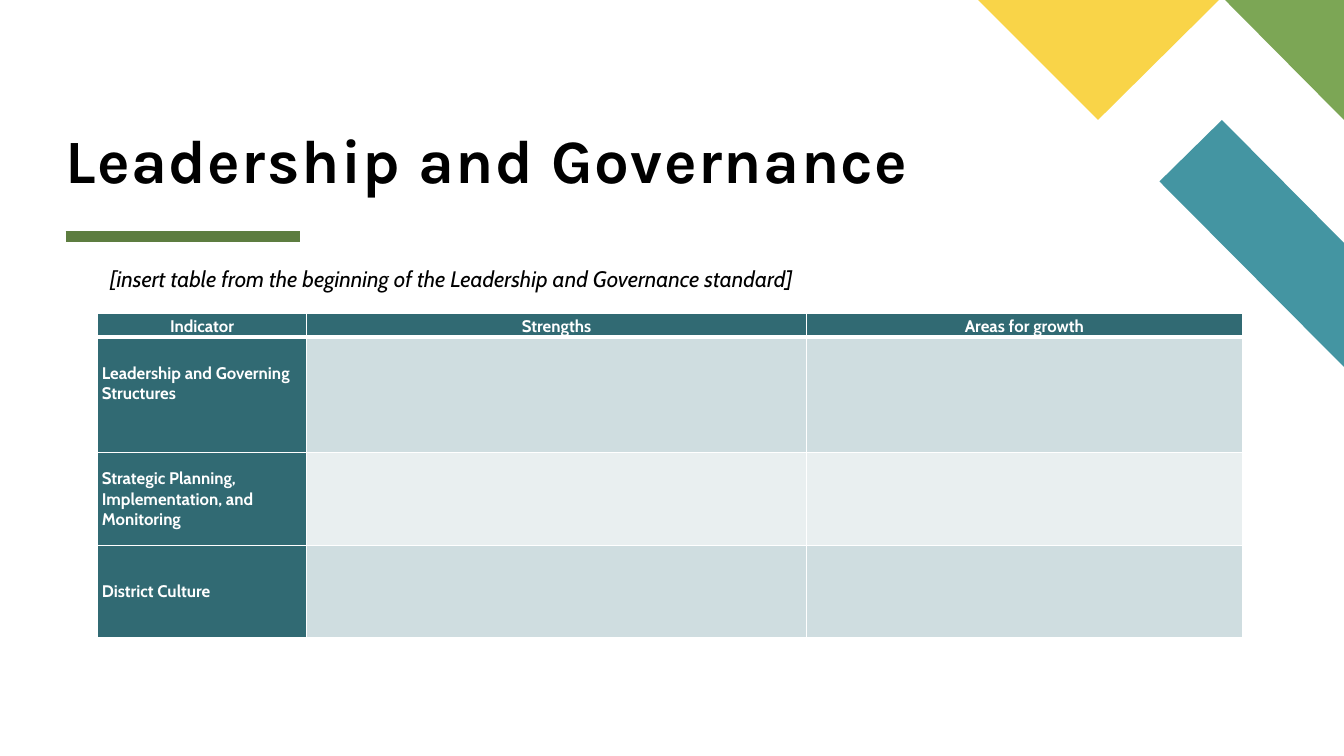
import pptx
import pptx.dml.color
import pptx.enum.shapes
import pptx.enum.text
import pptx.oxml
import pptx.oxml.ns
import pptx.util
from pptx.util import Inches

COLORS = {
    "black": "000000", "white": "FFFFFF", "yellow": "F9D448", "leaf": "7CA655",
    "moss": "5D7D40", "teal": "4495A2", "dark teal": "316A73",
    "band": "CFDDE0", "light band": "E9EFF0",
}
ALIGN = pptx.enum.text.PP_ALIGN
ANCHOR = pptx.enum.text.MSO_ANCHOR

CORNER_SHAPES = [
    ("teal", [(13.33, 3.64), (13.33, 2.41), (12.12, 1.19), (11.5, 1.8)]),
    ("leaf", [(13.33, 1.19), (13.33, 0), (12.15, 0)]),
    ("yellow", [(9.7, 0), (10.89, 1.19), (12.09, 0)]),
]
HEADERS = ["Indicator", "Strengths", "Areas for growth"]
INDICATORS = [
    "Leadership and Governing Structures",
    "Strategic Planning, Implementation, and Monitoring",
    "District Culture",
]
COLUMN_WIDTHS = [2.07, 4.96, 4.32]
ROW_HEIGHTS = [0.23, 1.15, 0.92, 0.92]


def rgb(name):
    return pptx.dml.color.RGBColor.from_string(COLORS[name])


def write_text(frame, text, *, font, size, color, bold=False, italic=False,
               align=ALIGN.LEFT, line_spacing=None, before=0, after=0,
               tracking=None, indent=0):
    """Fill the frame's first paragraph; tracking is in hundredths of a point."""
    paragraph = frame.paragraphs[0]
    paragraph.alignment = align
    paragraph.line_spacing = line_spacing
    paragraph.space_before = pptx.util.Pt(before)
    paragraph.space_after = pptx.util.Pt(after)
    if indent:
        paragraph._p.get_or_add_pPr().set("marL", str(Inches(indent)))
    run = paragraph.add_run()
    run.text = text
    run.font.name = font
    run.font.size = pptx.util.Pt(size)
    run.font.bold = bold
    run.font.italic = italic
    run.font.color.rgb = rgb(color)
    if tracking:
        run.font._element.set("spc", str(tracking))


def add_text_box(slide, left, top, width, height, text, anchor, margins, **text_format):
    frame = slide.shapes.add_textbox(
        Inches(left), Inches(top), Inches(width), Inches(height)).text_frame
    frame.word_wrap = True
    frame.vertical_anchor = anchor
    set_margins(frame, margins)
    write_text(frame, text, **text_format)


def set_margins(target, margins):
    """Set left, top, right and bottom margins of a text frame or a cell."""
    (target.margin_left, target.margin_top,
     target.margin_right, target.margin_bottom) = map(Inches, margins)


def add_polygon(slide, points, color):
    corners = [(Inches(x), Inches(y)) for x, y in points]
    builder = slide.shapes.build_freeform(*corners[0])
    builder.add_line_segments(corners[1:], close=True)
    shape = builder.convert_to_shape()
    shape.shadow.inherit = False
    shape.fill.solid()
    shape.fill.fore_color.rgb = rgb(color)
    shape.line.fill.background()


def add_rule(slide, left, right, y, color, weight):
    rule = slide.shapes.add_connector(
        pptx.enum.shapes.MSO_CONNECTOR.STRAIGHT,
        Inches(left), Inches(y), Inches(right), Inches(y))
    rule.line.color.rgb = rgb(color)
    rule.line.width = pptx.util.Pt(weight)
    rule._element.spPr.append(pptx.oxml.parse_xml(
        f"<a:effectLst {pptx.oxml.ns.nsdecls('a')}/>"))


def style_cell(cell, color, top_border=1, bottom_border=1):
    properties = cell._tc.get_or_add_tcPr()
    weights = {"lnL": 1, "lnR": 1, "lnT": top_border, "lnB": bottom_border}
    for tag, weight in weights.items():
        properties.append(pptx.oxml.parse_xml(
            f'<a:{tag} {pptx.oxml.ns.nsdecls("a")} w="{pptx.util.Pt(weight)}">'
            f'<a:solidFill><a:srgbClr val="{COLORS["white"]}"/></a:solidFill></a:{tag}>'))
    cell.fill.solid()
    cell.fill.fore_color.rgb = rgb(color)


def add_indicator_table(slide, left, top):
    table = slide.shapes.add_table(
        len(ROW_HEIGHTS), len(COLUMN_WIDTHS), Inches(left), Inches(top),
        Inches(sum(COLUMN_WIDTHS)), Inches(sum(ROW_HEIGHTS))).table
    for column, width in zip(table.columns, COLUMN_WIDTHS):
        column.width = Inches(width)
    for row, height in zip(table.rows, ROW_HEIGHTS):
        row.height = Inches(height)

    label_format = dict(font="Cabin", size=12, color="white", bold=True, before=2, after=2)
    for index, header in enumerate(HEADERS):
        cell = table.cell(0, index)
        style_cell(cell, "dark teal", bottom_border=3)
        set_margins(cell, (0.04, 0, 0.04, 0))
        write_text(cell.text_frame, header, align=ALIGN.CENTER,
                   line_spacing=1.15, **label_format)

    for row, indicator in enumerate(INDICATORS, start=1):
        top_border = 3 if row == 1 else 1
        label = table.cell(row, 0)
        style_cell(label, "dark teal", top_border)
        label.vertical_anchor = ANCHOR.MIDDLE
        # The first label sits a little above the middle of its taller row.
        set_margins(label, (0.04, 0, 0.04, 0.22 if row == 1 else 0))
        write_text(label.text_frame, indicator, **label_format)
        for column in range(1, len(HEADERS)):
            style_cell(table.cell(row, column),
                       "band" if row % 2 else "light band", top_border)


def main():
    presentation = pptx.Presentation()
    presentation.slide_width = Inches(13.33)
    presentation.slide_height = Inches(7.5)
    slide = presentation.slides.add_slide(presentation.slide_layouts[6])

    for color, points in CORNER_SHAPES:
        add_polygon(slide, points, color)
    add_rule(slide, 0.65, 2.98, 2.35, "moss", 8)
    add_text_box(slide, 0.65, 0.22, 12, 1.72, "Leadership and Governance",
                 ANCHOR.BOTTOM, (0, 0, 0, 0), font="Karla", size=44,
                 color="black", bold=True, line_spacing=0.8, tracking=100)
    add_text_box(slide, 0.65, 2.58, 12, 0.5,
                 "[insert table from the beginning of the Leadership and Governance standard]",
                 ANCHOR.TOP, (0, 0.05, 0.1, 0.05), font="Cabin", size=16,
                 color="black", italic=True, before=6, indent=0.44)
    add_indicator_table(slide, 0.97, 3.11)

    presentation.save("out.pptx")


if __name__ == "__main__":
    main()
